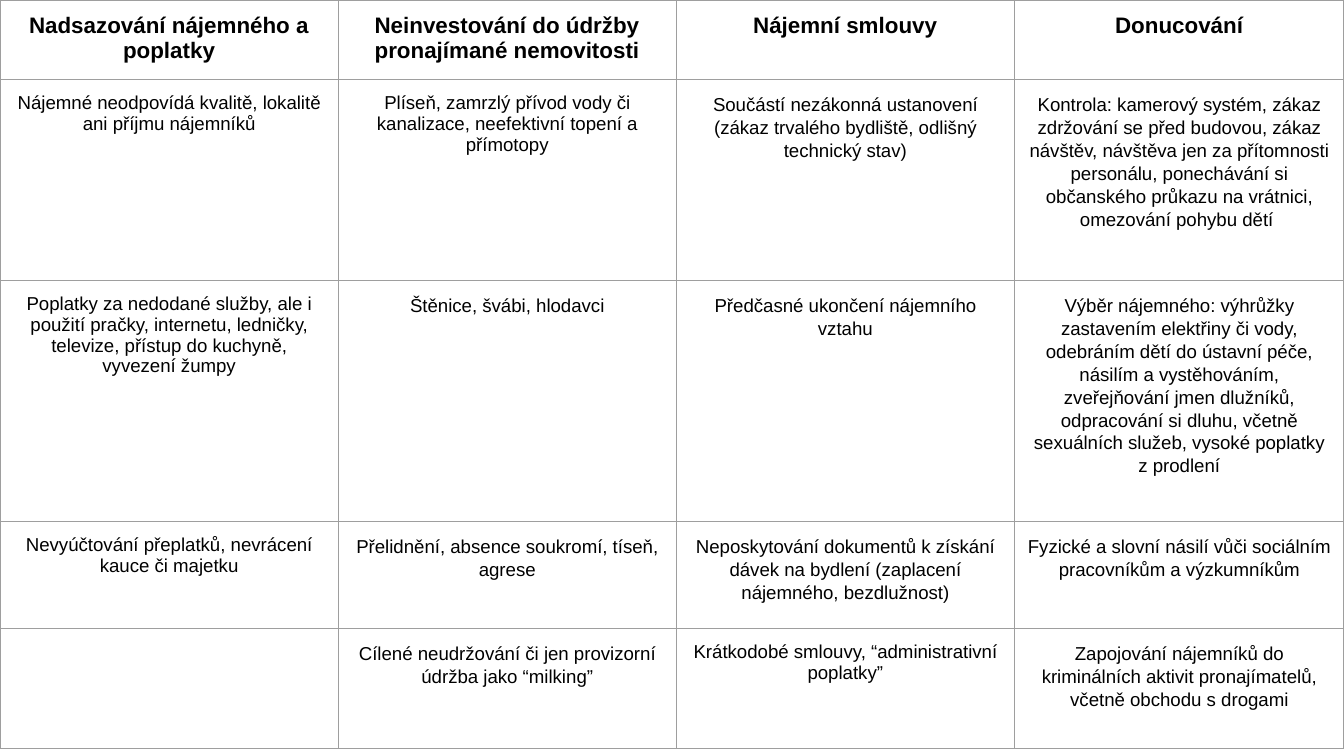
import pptx
import pptx.dml.color
import pptx.enum.text
import pptx.oxml
import pptx.oxml.ns
import pptx.util
from pptx.util import Cm

COLS = [6.39, 6.39, 6.39, 6.23]
ROWS = [1.5, 3.8, 4.55, 2.03, 2.27]
HEADS = [
    "Nadsazování nájemného a poplatky",
    "Neinvestování do údržby pronajímané nemovitosti",
    "Nájemní smlouvy",
    "Donucování",
]
BODY = [
    [
        "Nájemné neodpovídá kvalitě, lokalitě ani příjmu nájemníků",
        "Plíseň, zamrzlý přívod vody či kanalizace, neefektivní topení a přímotopy",
        "Součástí nezákonná ustanovení (zákaz trvalého bydliště, odlišný technický stav)",
        "Kontrola: kamerový systém, zákaz zdržování se před budovou, zákaz návštěv, "
        "návštěva jen za přítomnosti personálu, ponechávání si občanského průkazu "
        "na vrátnici, omezování pohybu dětí ",
    ],
    [
        "Poplatky za nedodané služby, ale i použití pračky, internetu, ledničky, "
        "televize, přístup do kuchyně, vyvezení žumpy",
        "Štěnice, švábi, hlodavci",
        "Předčasné ukončení nájemního vztahu",
        "Výběr nájemného: výhrůžky zastavením elektřiny či vody, odebráním dětí do "
        "ústavní péče, násilím a vystěhováním, zveřejňování jmen dlužníků, "
        "odpracování si dluhu, včetně sexuálních služeb, vysoké poplatky z prodlení",
    ],
    [
        "Nevyúčtování přeplatků, nevrácení kauce či majetku",
        "Přelidnění, absence soukromí, tíseň, agrese",
        "Neposkytování dokumentů k získání dávek na bydlení (zaplacení nájemného, "
        "bezdlužnost)",
        "Fyzické a slovní násilí vůči sociálním pracovníkům a výzkumníkům",
    ],
    [
        "",
        "Cílené neudržování či jen provizorní údržba jako “milking”",
        "Krátkodobé smlouvy, “administrativní poplatky”",
        "Zapojování nájemníků do kriminálních aktivit pronajímatelů, včetně obchodu "
        "s drogami",
    ],
]
# Body cells set solid, besides the header row and the first column
TIGHT = {(1, 1), (4, 2)}


def color(code):
    return pptx.dml.color.RGBColor.from_string(code)


def border(cell, code, width):
    props = cell._tc.get_or_add_tcPr()
    for side in ("lnL", "lnR", "lnT", "lnB"):
        props.append(pptx.oxml.parse_xml(
            f'<a:{side} {pptx.oxml.ns.nsdecls("a")} w="{pptx.util.Pt(width)}">'
            f'<a:solidFill><a:srgbClr val="{code}"/></a:solidFill></a:{side}>'))


def write(cell, text, size, bold, loose):
    """Centre one run of text; loose adds line and paragraph spacing."""
    para = cell.text_frame.paragraphs[0]
    para.alignment = pptx.enum.text.PP_ALIGN.CENTER
    if loose:
        para.line_spacing = 1.1
        para.space_before = pptx.util.Pt(9)
    run = para.add_run()
    run.text = text
    run.font.name = "Arial"
    run.font.size = pptx.util.Pt(size)
    run.font.bold = bold
    run.font.color.rgb = color("000000")


def style(cell):
    cell.margin_left = cell.margin_right = Cm(0.25)
    cell.margin_top = cell.margin_bottom = Cm(0.25)
    border(cell, "9E9E9E", 0.75)
    cell.fill.background()


def add_grid(slide):
    table = slide.shapes.add_table(
        len(ROWS), len(COLS), 0, 0, Cm(sum(COLS)), Cm(sum(ROWS))).table
    table.first_row = table.horz_banding = False
    for col, width in zip(table.columns, COLS):
        col.width = Cm(width)
    for row, height in zip(table.rows, ROWS):
        row.height = Cm(height)
    for r, texts in enumerate([HEADS] + BODY):
        for c, text in enumerate(texts):
            cell = table.cell(r, c)
            style(cell)
            if text:
                head = r == 0
                loose = not head and c > 0 and (r, c) not in TIGHT
                write(cell, text, 12 if head else 10, head, loose)


def main():
    deck = pptx.Presentation()
    deck.slide_width, deck.slide_height = Cm(25.4), Cm(14.29)
    slide = deck.slides.add_slide(deck.slide_layouts[6])
    add_grid(slide)
    deck.save("out.pptx")


if __name__ == "__main__":
    main()
